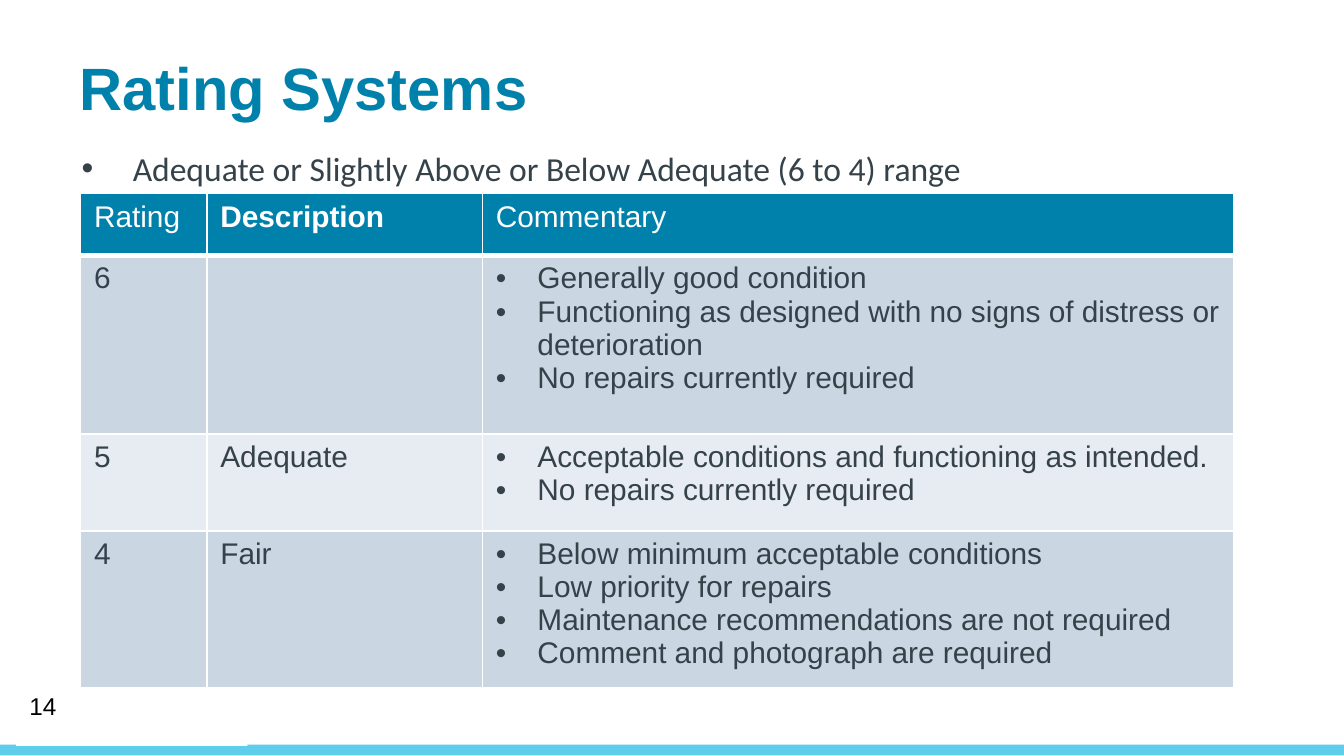
from lxml.etree import SubElement
from pptx import Presentation
from pptx.dml.color import RGBColor
from pptx.enum.shapes import MSO_SHAPE
from pptx.enum.text import MSO_ANCHOR
from pptx.oxml.ns import qn
from pptx.util import Inches, Pt

WHITE = RGBColor(0xFF, 0xFF, 0xFF)
BLACK = RGBColor(0, 0, 0)
BLUE = RGBColor(0x00, 0x81, 0xAB)
SKY = RGBColor(0x5F, 0xCE, 0xEA)
SLATE = RGBColor(0x36, 0x42, 0x4A)
BANDS = [RGBColor(0xCA, 0xD7, 0xE2), RGBColor(0xE6, 0xEC, 0xF1)]

WIDE = 10
TALL = WIDE * 9 / 16
COLS = [0.94, 2.05, 5.59]
HEAD = [("Rating", False), ("Description", True), ("Commentary", False)]
HEAD_TALL = 0.46
ROWS = [
    (1.33, "6", "", [
        "Generally good condition",
        "Functioning as designed with no signs of distress or deterioration",
        "No repairs currently required",
    ]),
    (0.72, "5", "Adequate", [
        "Acceptable conditions and functioning as intended.",
        "No repairs currently required",
    ]),
    (1.03, "4", "Fair", [
        "Below minimum acceptable conditions",
        "Low priority for repairs",
        "Maintenance recommendations are not required",
        "Comment and photograph are required",
    ]),
]


def add_bullet(para, indent):
    props = para._p.get_or_add_pPr()
    props.set("marL", str(Inches(indent)))
    props.set("indent", str(-Inches(indent)))
    tint = SubElement(props, qn("a:buClr"))
    SubElement(tint, qn("a:srgbClr"), val=str(SLATE))
    SubElement(props, qn("a:buFont"), typeface="Arial")
    SubElement(props, qn("a:buChar"), char="•")


def add_run(para, text, size, color, bold=False, face="Arial"):
    run = para.add_run()
    run.text = text
    font = run.font
    font.name, font.size, font.bold = face, Pt(size), bold
    font.color.rgb = color


def add_bar(slide, box, color):
    bar = slide.shapes.add_shape(MSO_SHAPE.RECTANGLE, *map(Inches, box))
    bar.shadow.inherit = False
    bar.fill.solid()
    bar.fill.fore_color.rgb = color
    bar.line.fill.background()


def add_box(slide, box, left=0.1, anchor=MSO_ANCHOR.TOP):
    """Add a wrapping text box and return its first paragraph."""
    frame = slide.shapes.add_textbox(*map(Inches, box)).text_frame
    frame.word_wrap = True
    frame.margin_left = Inches(left)
    frame.vertical_anchor = anchor
    return frame.paragraphs[0]


def style_cell(cell, color, base=1):
    """Give a cell white borders and a fill; base is the bottom line width."""
    props = cell._tc.get_or_add_tcPr()
    for side, width in zip("LRTB", (1, 1, 1, base)):
        line = SubElement(props, qn(f"a:ln{side}"), w=str(Pt(width)))
        fill = SubElement(line, qn("a:solidFill"))
        SubElement(fill, qn("a:srgbClr"), val=str(WHITE))
    cell.fill.solid()
    cell.fill.fore_color.rgb = color


def fill_list(cell, items):
    frame = cell.text_frame
    for i, item in enumerate(items):
        para = frame.add_paragraph() if i else frame.paragraphs[0]
        add_bullet(para, 0.31)
        add_run(para, item, 16, SLATE)


def add_ratings(slide):
    talls = [HEAD_TALL] + [row[0] for row in ROWS]
    box = (0.6, 1.44, sum(COLS), sum(talls))
    table = slide.shapes.add_table(
        len(talls), len(COLS), *map(Inches, box)).table
    table.first_row = table.horz_banding = False
    for col, width in zip(table.columns, COLS):
        col.width = Inches(width)
    for row, tall in zip(table.rows, talls):
        row.height = Inches(tall)

    for cell, (text, bold) in zip(table.rows[0].cells, HEAD):
        style_cell(cell, BLUE, 3)
        add_run(cell.text_frame.paragraphs[0], text, 16, WHITE, bold)

    for i, (_, score, label, notes) in enumerate(ROWS):
        cells = list(table.rows[i + 1].cells)
        for cell in cells:
            style_cell(cell, BANDS[i % 2])
        for cell, text in zip(cells, (score, label)):
            if text:
                add_run(cell.text_frame.paragraphs[0], text, 16, SLATE)
        fill_list(cells[2], notes)


def main():
    deck = Presentation()
    deck.slide_width, deck.slide_height = Inches(WIDE), Inches(TALL)
    slide = deck.slides.add_slide(deck.slide_layouts[6])

    add_bar(slide, (0, 5.54, WIDE, 0.08), SKY)
    add_bar(slide, (0.12, 5.42, 1.72, 0.13), WHITE)
    number = add_box(slide, (0.12, 5.1, 2.25, 0.3), anchor=MSO_ANCHOR.MIDDLE)
    add_run(number, "14", 13, BLACK)

    lead = add_box(slide, (0.51, 1.05, 9.07, 1.21))
    add_bullet(lead, 0.38)
    add_run(lead, "Adequate or Slightly Above or Below Adequate (6 to 4) range",
            18, SLATE, face="Calibri")

    title = add_box(slide, (0.59, 0.33, 8.99, 0.61), left=0)
    add_run(title, "Rating Systems", 32, BLUE, bold=True)
    add_ratings(slide)
    deck.save("out.pptx")


if __name__ == "__main__":
    main()
